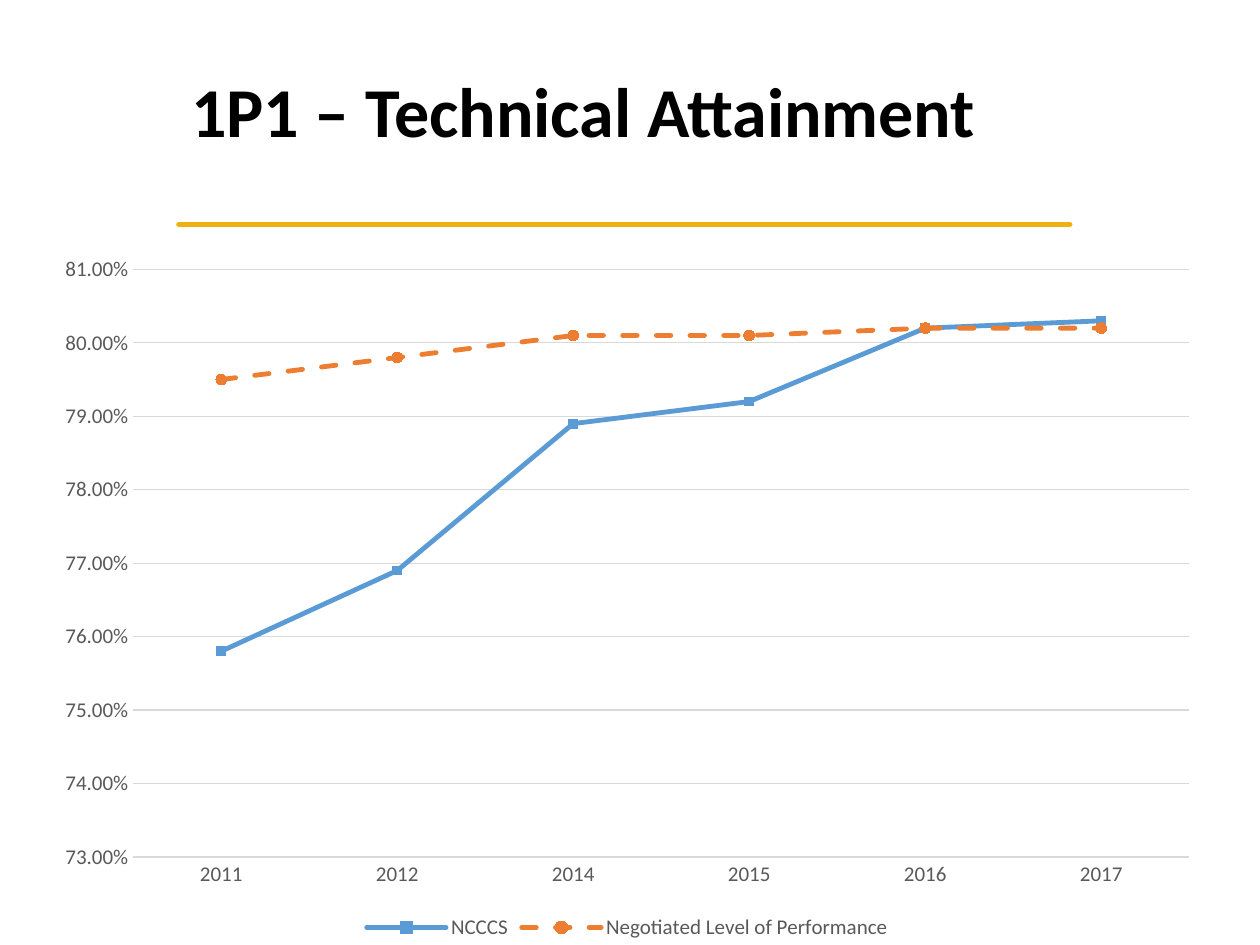
"""Build the 1P1 Technical Attainment slide with its line chart."""
from pptx import Presentation
from pptx import util as u
from pptx.chart import data
from pptx.dml import color
from pptx.enum import chart as ch, dml, shapes, text
from pptx.oxml import parse_xml

Pt = u.Pt
hue = color.RGBColor.from_string
theme = {
    "font": "Calibri", "head": Pt(40), "label": Pt(12),
    "black": hue("000000"), "grey": hue("595959"), "grid": hue("D9D9D9"),
    "gold": hue("EEB111"), "blue": hue("5B9BD5"), "orange": hue("ED7D31"),
    "square": hue("559BDB"), "circle": hue("F67B28"),
}
years = ["2011", "2012", "2014", "2015", "2016", "2017"]
rates = {
    "NCCCS": [0.758, 0.769, 0.789, 0.792, 0.802, 0.803],
    "Negotiated Level of Performance": [0.795, 0.798, 0.801, 0.801, 0.802, 0.802],
}
styles = [
    (theme["blue"], theme["square"], ch.XL_MARKER_STYLE.SQUARE, 5, dml.MSO_LINE.SOLID),
    (theme["orange"], theme["circle"], ch.XL_MARKER_STYLE.CIRCLE, 6, dml.MSO_LINE.DASH),
]


def set_font(font, size, tint):
    font.name, font.size, font.color.rgb = theme["font"], size, tint


def set_line(line, tint, width):
    line.color.rgb, line.width = tint, Pt(width)


deck = Presentation()
deck.slide_width, deck.slide_height = Pt(720), Pt(540)
slide = deck.slides.add_slide(deck.slide_layouts[6])

rule = slide.shapes.add_connector(
    shapes.MSO_CONNECTOR.STRAIGHT, Pt(102.2), Pt(128.2), Pt(611.3), Pt(128.2))
set_line(rule.line, theme["gold"], 3)
rule.element.spPr.append(parse_xml(
    '<a:effectLst xmlns:a="http://schemas.openxmlformats.org/drawingml/2006/main"/>'))

table = data.CategoryChartData(number_format="0.00%")
table.categories = years
for name, vals in rates.items():
    table.add_series(name, vals)
chart = slide.shapes.add_chart(
    ch.XL_CHART_TYPE.LINE_MARKERS, Pt(24), Pt(138.8), Pt(668.9), Pt(401.2), table).chart
chart.has_title = False
set_font(chart.font, theme["label"], theme["grey"])
chart.has_legend = True
chart.legend.position = ch.XL_LEGEND_POSITION.BOTTOM
chart.legend.include_in_layout = False
set_font(chart.legend.font, theme["label"], theme["grey"])

for axis in (chart.category_axis, chart.value_axis):
    axis.major_tick_mark = axis.minor_tick_mark = ch.XL_TICK_MARK.NONE
    set_font(axis.tick_labels.font, theme["label"], theme["grey"])
set_line(chart.category_axis.format.line, theme["grid"], 1)
scale = chart.value_axis
scale.minimum_scale, scale.maximum_scale, scale.major_unit = 0.73, 0.81, 0.01
scale.tick_labels.number_format = "0.00%"
scale.tick_labels.number_format_is_linked = False
scale.format.line.fill.background()
set_line(scale.major_gridlines.format.line, theme["grid"], 0.75)

chart.plots[0].vary_by_categories = False
for series, (tint, fill, mark, size, dash) in zip(chart.plots[0].series, styles):
    series.smooth = False
    set_line(series.format.line, tint, 2.75)
    series.format.line.dash_style = dash
    series.marker.style, series.marker.size = mark, size
    series.marker.format.fill.solid()
    series.marker.format.fill.fore_color.rgb = fill
    series.marker.format.line.fill.background()

for line in rule.element.xpath(".//a:ln") + chart.element.xpath(".//c:ser/c:spPr/a:ln"):
    line.set("cap", "rnd")

title = slide.shapes.add_textbox(Pt(102.2), Pt(13.3), Pt(579.6), Pt(104.4)).text_frame
title.word_wrap = True
title.vertical_anchor = text.MSO_ANCHOR.MIDDLE
head = title.paragraphs[0]
head.text = "1P1 – Technical Attainment"
head.line_spacing = 0.9
set_font(head.font, theme["head"], theme["black"])
head.font.bold = True

deck.save("out.pptx")
